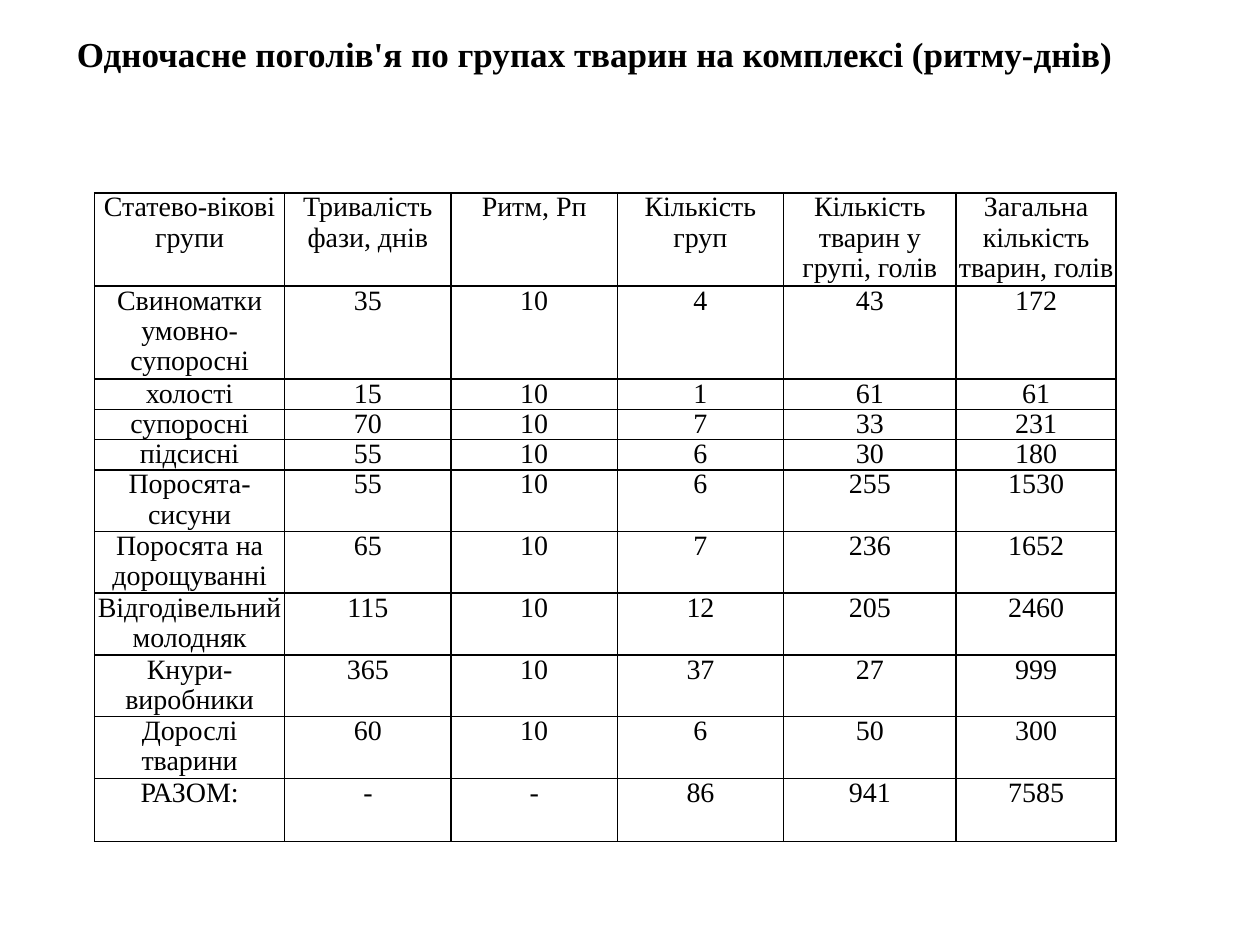
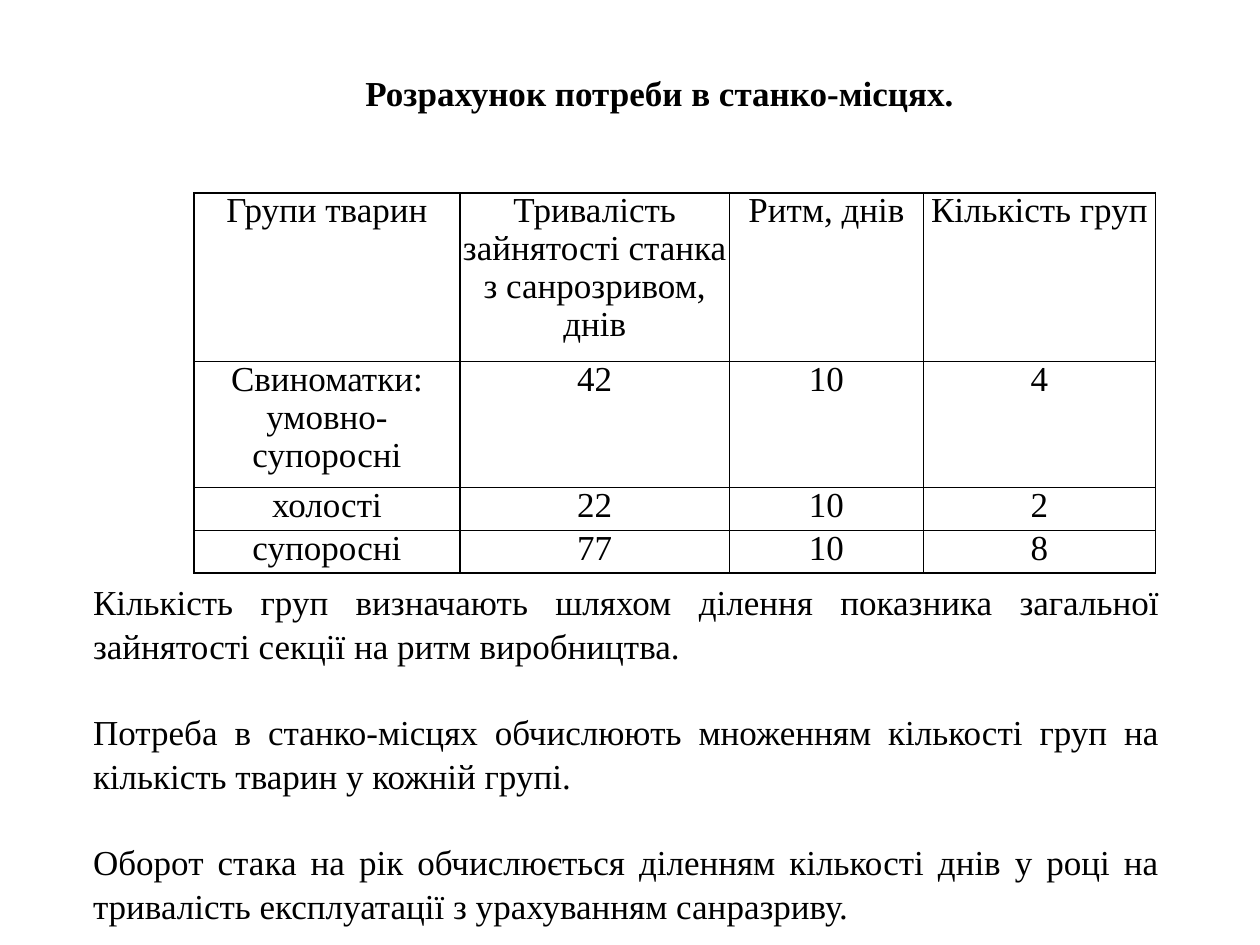
from lxml import etree
from pptx import Presentation
from pptx.dml.color import RGBColor
from pptx.enum import text
from pptx.oxml import ns
from pptx.util import Inches, Pt

BLACK = RGBColor(0x00, 0x00, 0x00)
WHITE = RGBColor(0xFF, 0xFF, 0xFF)
FONT = "Times New Roman"
ALIGN = text.PP_ALIGN
TITLE_ONLY = 5

HERD_COLS = [1.51, 1.32, 1.32, 1.32, 1.37, 1.27]
HERD_HEIGHTS = [0.74] * 2 + [0.24] * 3 + [0.49] * 5 + [0.5]
HERD_ROWS = [
    ["Статево-вікові групи", "Тривалість фази, днів", "Ритм, Рп",
     "Кількість\nгруп", "Кількість тварин у групі, голів",
     "Загальна кількість тварин, голів"],
    ["Свиноматки умовно-супоросні", "35", "10", "4", "43", "172"],
    ["холості", "15", "10", "1", "61", "61"],
    ["супоросні", "70", "10", "7", "33", "231"],
    ["підсисні", "55", "10", "6", "30", "180"],
    ["Поросята-сисуни", "55", "10", "6", "255", "1530"],
    ["Поросята на дорощуванні", "65", "10", "7", "236", "1652"],
    ["Відгодівельний молодняк", "115", "10", "12", "205", "2460"],
    ["Кнури-виробники", "365", "10", "37", "27", "999"],
    ["Дорослі тварини", "60", "10", "6", "50", "300"],
    ["РАЗОМ:", "-", "-", "86", "941", "7585"],
]

STALL_COLS = [2.11, 2.14, 1.54, 1.84]
STALL_HEIGHTS = [1.34, 1.0, 0.34, 0.34]
STALL_ROWS = [
    ["Групи тварин", "Тривалість зайнятості станка з санрозривом, днів",
     "Ритм, днів", "Кількість груп"],
    ["Свиноматки: умовно-супоросні", "42", "10", "4"],
    ["холості", "22", "10", "2"],
    ["супоросні", "77", "10", "8"],
]

STALL_NOTES = [
    "Кількість груп визначають шляхом ділення показника загальної "
    "зайнятості секції на ритм виробництва.",
    "Потреба в станко-місцях обчислюють множенням кількості груп на "
    "кількість тварин у кожній групі.",
    "Оборот стака на рік обчислюється діленням кількості днів у році на "
    "тривалість експлуатації з урахуванням санразриву.",
]


def set_all(obj, values):
    for name, value in values.items():
        setattr(obj, name, value)


def write(tf, lines, size, bold=False, gap=0, **para_format):
    """Fill a text frame with one paragraph per line, gap points apart."""
    for i, line in enumerate(lines):
        p = tf.paragraphs[0] if i == 0 else tf.add_paragraph()
        set_all(p, para_format)
        if i and gap:
            p.space_before = Pt(gap)
        r = p.add_run()
        r.text = line
        set_all(r.font, {"name": FONT, "size": Pt(size), "bold": bold})
        r.font.color.rgb = BLACK


def place(sp, box):
    for name, value in zip(("left", "top", "width", "height"), box):
        setattr(sp, name, Inches(value))


def add_titled_slide(prs, title, box, wrap=True):
    s = prs.slides.add_slide(prs.slide_layouts[TITLE_ONLY])
    sp = s.shapes.title
    place(sp, box)
    set_all(sp.text_frame, {"word_wrap": wrap,
                            "auto_size": text.MSO_AUTO_SIZE.NONE,
                            "vertical_anchor": text.MSO_ANCHOR.TOP})
    write(sp.text_frame, [title], 20, bold=True, alignment=ALIGN.LEFT)
    return s


def add_borders(cell):
    tc_pr = cell._tc.get_or_add_tcPr()
    for side in ("a:lnL", "a:lnR", "a:lnT", "a:lnB"):
        ln = etree.SubElement(tc_pr, ns.qn(side), w=str(Pt(1)))
        fill = etree.SubElement(ln, ns.qn("a:solidFill"))
        etree.SubElement(fill, ns.qn("a:srgbClr"), val=str(BLACK))


def add_grid(s, left, top, cols, heights, rows, size):
    """Add a plain ruled table of centred text."""
    box = [Inches(v) for v in (left, top, sum(cols), sum(heights))]
    table = s.shapes.add_table(len(rows), len(cols), *box).table
    set_all(table, {"first_row": False, "horz_banding": False})
    for column, width in zip(table.columns, cols):
        column.width = Inches(width)
    for row, height, values in zip(table.rows, heights, rows):
        row.height = Inches(height)
        for cell, value in zip(row.cells, values):
            set_all(cell, dict.fromkeys(("margin_left", "margin_right",
                                         "margin_top", "margin_bottom"), 0))
            add_borders(cell)
            cell.fill.solid()
            cell.fill.fore_color.rgb = WHITE
            write(cell.text_frame, value.split("\n"), size,
                  alignment=ALIGN.CENTER, line_spacing=0.97)


def add_notes_block(s, box, lines):
    tf = s.shapes.add_textbox(*[Inches(v) for v in box]).text_frame
    tf.word_wrap = True
    write(tf, lines, 20, gap=24, alignment=ALIGN.JUSTIFY, line_spacing=1.05)


def build_herd_slide(prs):
    s = add_titled_slide(
        prs, "Одночасне поголів'я по групах тварин на комплексі (ритму-днів)",
        (0.51, 0.21, 8.5, 0.44))
    add_grid(s, 0.75, 1.53, HERD_COLS, HERD_HEIGHTS, HERD_ROWS, 16)


def build_stall_slide(prs):
    s = add_titled_slide(prs, "Розрахунок потреби в станко-місцях.",
                         (2.8, 0.52, 4.91, 0.44), wrap=False)
    add_grid(s, 1.54, 1.53, STALL_COLS, STALL_HEIGHTS, STALL_ROWS, 20)
    add_notes_block(s, (0.64, 4.54, 8.66, 2.79), STALL_NOTES)


def main():
    prs = Presentation()
    set_all(prs, {"slide_width": Inches(10), "slide_height": Inches(7.5)})
    build_herd_slide(prs)
    build_stall_slide(prs)
    prs.save("out.pptx")


if __name__ == "__main__":
    main()
